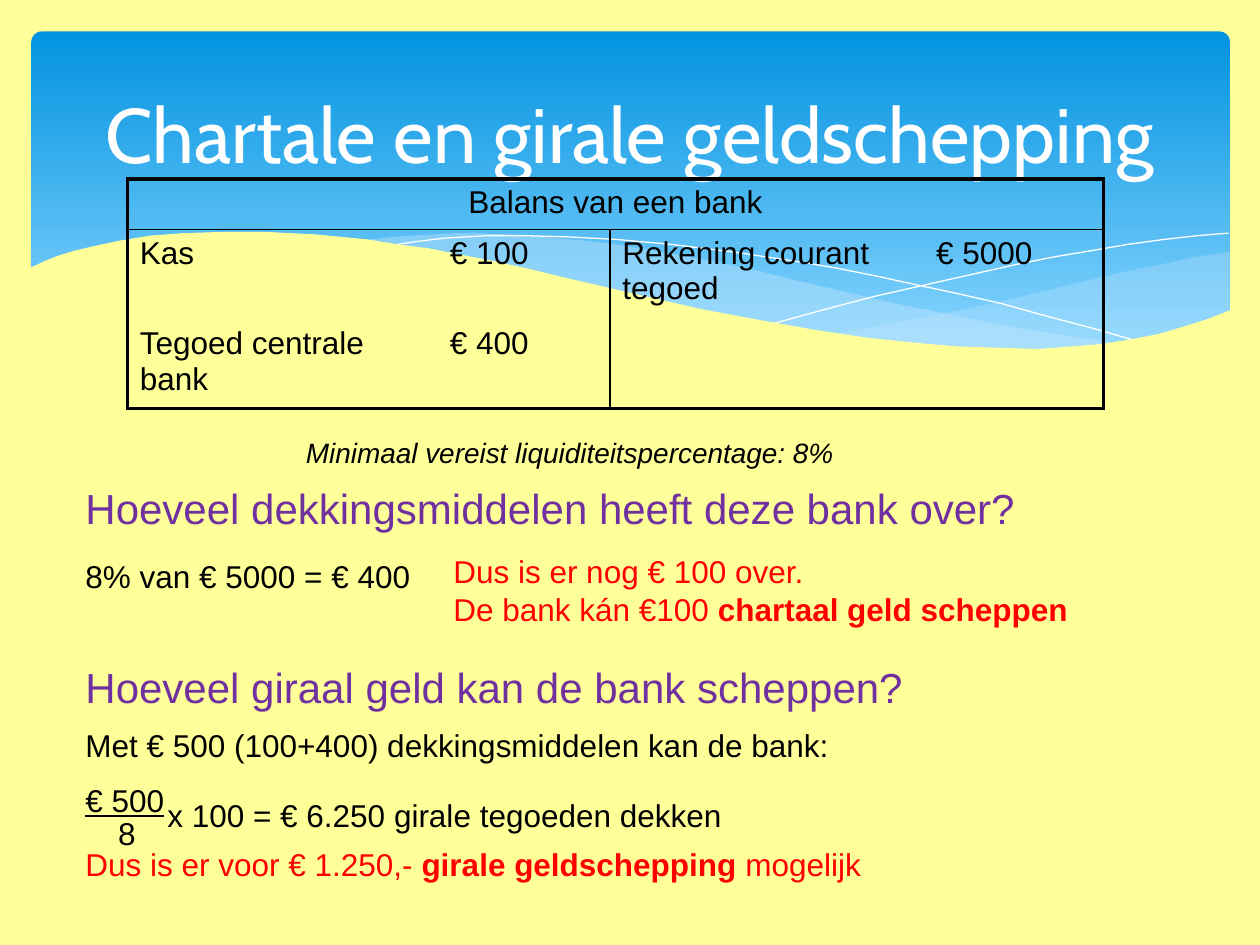
"""Build a slide on cash and deposit money creation by a bank."""
from lxml.etree import SubElement
from pptx import Presentation
from pptx.dml.color import RGBColor
from pptx.enum.shapes import MSO_SHAPE as Shape
from pptx.enum.text import MSO_ANCHOR as Anchor, PP_ALIGN as Align
from pptx.oxml.ns import qn
from pptx.util import Inches, Pt

COLORS = {"paper": "FFFF99", "sky": "0293E0", "haze": "83D3FE", "wave": "C6E7FC",
          "white": "FFFFFF", "ink": "000000", "answer": "FF0000", "question": "7030A0"}

FORMATS = {
    "title": {"size": Pt(44), "name": "Cabin"},
    "body": {"size": Pt(18), "name": "Arial"},
    "note": {"size": Pt(16), "name": "Arial", "italic": True},
    "question": {"size": Pt(24), "name": "Arial"},
    "strong": {"size": Pt(18), "name": "Arial", "bold": True},
    "numerator": {"size": Pt(18), "name": "Arial", "underline": True},
}

RIGHT_WAVE = [
    (9.75, 2), (9.48, 2.04), (9.21, 2.1), (8.91, 2.16), (8.61, 2.23), (8.05, 2.37),
    (7.53, 2.48), (7.06, 2.57), (6.61, 2.65), (6.91, 2.69), (7.19, 2.72), (7.45, 2.75),
    (7.69, 2.77), (8.03, 2.78), (8.35, 2.77), (8.63, 2.75), (8.89, 2.72), (9.13, 2.67),
    (9.35, 2.62), (9.49, 2.57), (9.63, 2.52), (9.76, 2.47), (9.76, 2)]
MIDDLE_WAVE = [
    (8.93, 2.73), (8.66, 2.69), (8.37, 2.65), (8.07, 2.6), (7.75, 2.54), (7.41, 2.47),
    (7.06, 2.4), (6.68, 2.31), (6.29, 2.22), (5.98, 2.14), (5.69, 2.08), (5.41, 2.03),
    (5.14, 1.98), (4.89, 1.94), (4.65, 1.91), (4.42, 1.89), (4.2, 1.87), (3.99, 1.86),
    (3.8, 1.85), (3.61, 1.85), (3.44, 1.86), (3.28, 1.87), (3.13, 1.88), (2.86, 1.91),
    (3.23, 1.96), (3.62, 2.03), (4.04, 2.11), (4.49, 2.22), (4.91, 2.32), (5.3, 2.4),
    (5.66, 2.48), (6.01, 2.55), (6.34, 2.61), (6.65, 2.66), (6.95, 2.7), (7.22, 2.74),
    (7.48, 2.76), (7.73, 2.77), (7.96, 2.78), (8.28, 2.78), (8.57, 2.77), (8.76, 2.75)]
FALLING_LINE = [
    (3.09, 1.95), (3.28, 1.92), (3.53, 1.89), (3.87, 1.87), (4.16, 1.87), (4.5, 1.88),
    (4.89, 1.9), (5.33, 1.94), (5.82, 2), (6.36, 2.08), (6.65, 2.13), (6.95, 2.19),
    (7.27, 2.26), (7.6, 2.33), (7.95, 2.41), (8.31, 2.51), (8.69, 2.61), (9.07, 2.72)]
RISING_LINE = [
    (6.13, 2.57), (6.53, 2.46), (6.95, 2.35), (7.48, 2.23), (8.06, 2.1), (8.36, 2.04),
    (8.66, 1.99), (8.95, 1.94), (9.24, 1.9), (9.51, 1.87), (9.75, 1.85)]
PAPER_EDGE = [
    (9.77, 2.46), (9.59, 2.53), (9.4, 2.59), (9.2, 2.65), (8.99, 2.69), (8.75, 2.73),
    (8.5, 2.75), (8.23, 2.77), (7.93, 2.76), (7.61, 2.75), (7.26, 2.72), (6.88, 2.68),
    (6.48, 2.62), (6.03, 2.54), (5.55, 2.45), (5.03, 2.33), (4.47, 2.2), (4.18, 2.13),
    (3.91, 2.07), (3.65, 2.02), (3.4, 1.97), (3.16, 1.94), (2.92, 1.9), (2.71, 1.88),
    (2.5, 1.86), (2.3, 1.85), (2.11, 1.84), (1.77, 1.84), (1.46, 1.85), (1.19, 1.87),
    (0.95, 1.91), (0.76, 1.95), (0.59, 1.99), (0.46, 2.03), (0.36, 2.07), (0.23, 2.13),
    (0.23, 3.29), (9.77, 3.29)]

BALANCE = [["Balans van een bank", "", "", ""],
           ["Kas", "€ 100", "Rekening courant tegoed", "€ 5000"],
           ["Tegoed centrale bank", "€ 400", "", ""]]


def rgb(color):
    return RGBColor.from_string(COLORS[color])


class SlideWriter:
    def __init__(self, slide):
        self.slide = slide
        slide.background.fill.solid()
        slide.background.fill.fore_color.rgb = rgb("paper")

    def banner(self, left, top, width, height):
        banner = self.slide.shapes.add_shape(
            Shape.ROUNDED_RECTANGLE, *map(Inches, (left, top, width, height)))
        banner.adjustments[0] = 0.03
        banner.shadow.inherit = False
        banner.line.fill.background()
        banner.fill.gradient()
        banner.fill.gradient_angle = 270
        for stop, color, position in zip(banner.fill.gradient_stops, ("sky", "haze"), (0, 0.9)):
            stop.color.rgb = rgb(color)
            stop.position = position

    def curve(self, points, fill=None, alpha=100):
        start, *rest = [(Inches(x), Inches(y)) for x, y in points]
        builder = self.slide.shapes.build_freeform(*start)
        builder.add_line_segments(rest, close=fill is not None)
        curve = builder.convert_to_shape()
        curve.shadow.inherit = False
        if fill is None:
            curve.fill.background()
            curve.line.color.rgb = rgb("white")
            curve.line.width = Pt(0)
            return
        curve.line.fill.background()
        curve.fill.solid()
        curve.fill.fore_color.rgb = rgb(fill)
        if alpha < 100:
            tint = curve.fill._xPr.find(".//" + qn("a:srgbClr"))
            SubElement(tint, qn("a:alpha"), val=str(alpha * 1000))

    def run(self, paragraph, words, style="body", color="ink"):
        run = paragraph.add_run()
        run.text = words
        run.font.color.rgb = rgb(color)
        for key, value in FORMATS[style].items():
            setattr(run.font, key, value)

    def text(self, left, top, width, height, *paragraphs, color="ink",
             align=Align.LEFT, anchor=Anchor.TOP):
        box = self.slide.shapes.add_textbox(*map(Inches, (left, top, width, height)))
        frame = box.text_frame
        frame.word_wrap = True
        frame.vertical_anchor = anchor
        for index, runs in enumerate(paragraphs):
            paragraph = frame.add_paragraph() if index else frame.paragraphs[0]
            paragraph.alignment = align
            if index:
                paragraph.space_before = Pt(10)
            for words, style in runs:
                for number, line in enumerate(words.split("\n")):
                    if number:
                        paragraph.add_line_break()
                    self.run(paragraph, line, style, color)

    def border(self, cell, widths):
        for edge, width in zip("LRTB", widths):
            line = SubElement(cell._tc.get_or_add_tcPr(), qn(f"a:ln{edge}"), w=str(Pt(width)))
            if width:
                fill = SubElement(line, qn("a:solidFill"))
                SubElement(fill, qn("a:srgbClr"), val=COLORS["ink"])
            else:
                SubElement(line, qn("a:noFill"))

    def balance(self, left, top, widths, heights, rows):
        frame = self.slide.shapes.add_table(
            len(rows), len(widths), *map(Inches, (left, top, sum(widths), sum(heights))))
        table = frame.table
        table.first_row = table.horz_banding = False
        for column, width in zip(table.columns, widths):
            column.width = Inches(width)
        vertical = [2.25, 0, 1, 0, 2.25]
        horizontal = [2.25, 1, 0, 2.25]
        for r, row in enumerate(rows):
            table.rows[r].height = Inches(heights[r])
            for c, words in enumerate(row):
                cell = table.cell(r, c)
                sides = vertical[c:c + 2] if r else [2.25, 2.25]
                self.border(cell, sides + horizontal[r:r + 2])
                cell.fill.background()
                if words:
                    self.run(cell.text_frame.paragraphs[0], words)
        table.cell(0, 0).merge(table.cell(0, len(widths) - 1))
        table.cell(0, 0).text_frame.paragraphs[0].alignment = Align.CENTER


def main():
    deck = Presentation()
    deck.slide_width, deck.slide_height = Inches(10), Inches(7.5)
    page = SlideWriter(deck.slides.add_slide(deck.slide_layouts[6]))

    page.banner(0.25, 0.25, 9.51, 2.7)
    page.curve(RIGHT_WAVE, "wave", 29)
    page.curve(MIDDLE_WAVE, "wave", 40)
    page.curve(FALLING_LINE)
    page.curve(RISING_LINE)
    page.curve(PAPER_EDGE, "paper")

    page.text(0.5, 0.37, 9, 1.37, [("Chartale en girale geldschepping", "title")],
              color="white", align=Align.CENTER, anchor=Anchor.MIDDLE)
    page.balance(1.01, 1.42, [2.46, 1.37, 2.49, 1.43], [0.37, 0.72, 0.7], BALANCE)
    page.text(2.33, 3.41, 4.5, 0.37, [("Minimaal vereist liquiditeitspercentage: 8%", "note")])

    margin = 0.58
    page.text(margin, 4.37, 3.83, 0.4, [("8% van € 5000 = € 400", "body")])
    page.text(3.5, 4.33, 6.5, 0.71,
              [("Dus is er nog € 100 over.\nDe bank kán €100 ", "body"),
               ("chartaal geld scheppen", "strong")], color="answer")
    page.text(margin, 6.66, 9.17, 0.4,
              [("Dus is er voor € 1.250,- ", "body"), ("girale geldschepping", "strong"),
               (" mogelijk", "body")], color="answer")
    for top, width, question in (
            (3.78, 7.66, "Hoeveel dekkingsmiddelen heeft deze bank over?"),
            (5.2, 6.76, "Hoeveel giraal geld kan de bank scheppen?")):
        page.text(margin, top, width, 0.5, [(question, "question")], color="question")

    page.text(margin, 5.71, 9.08, 0.86,
              [("Met € 500 (100+400) dekkingsmiddelen kan de bank:", "body")],
              [("€ 500", "numerator")])
    page.text(0.84, 6.41, 0.34, 0.4, [("8", "body")])
    page.text(1.23, 6.27, 4.68, 0.4, [("x 100 = € 6.250 girale tegoeden dekken", "body")])
    deck.save("out.pptx")


if __name__ == "__main__":
    main()
